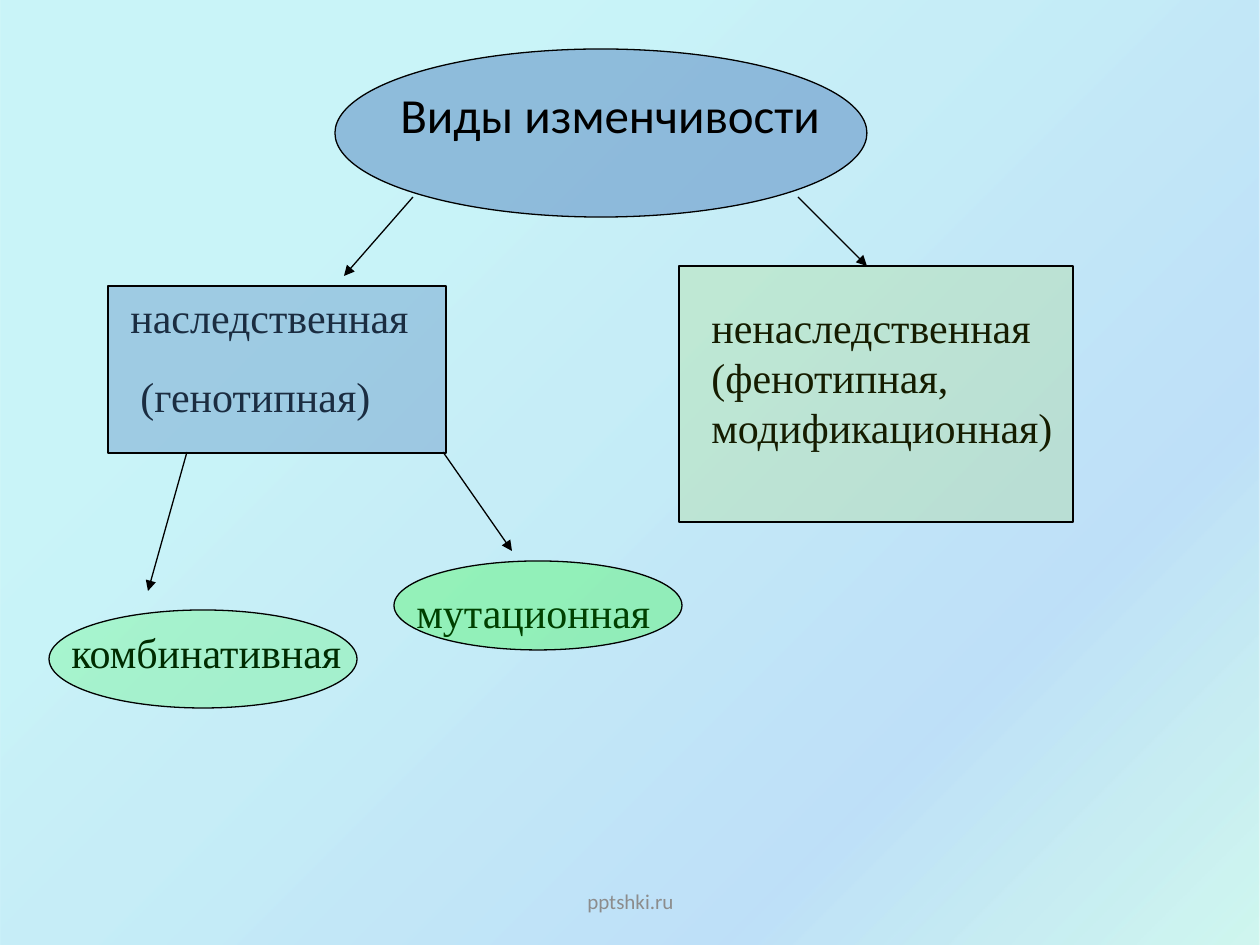
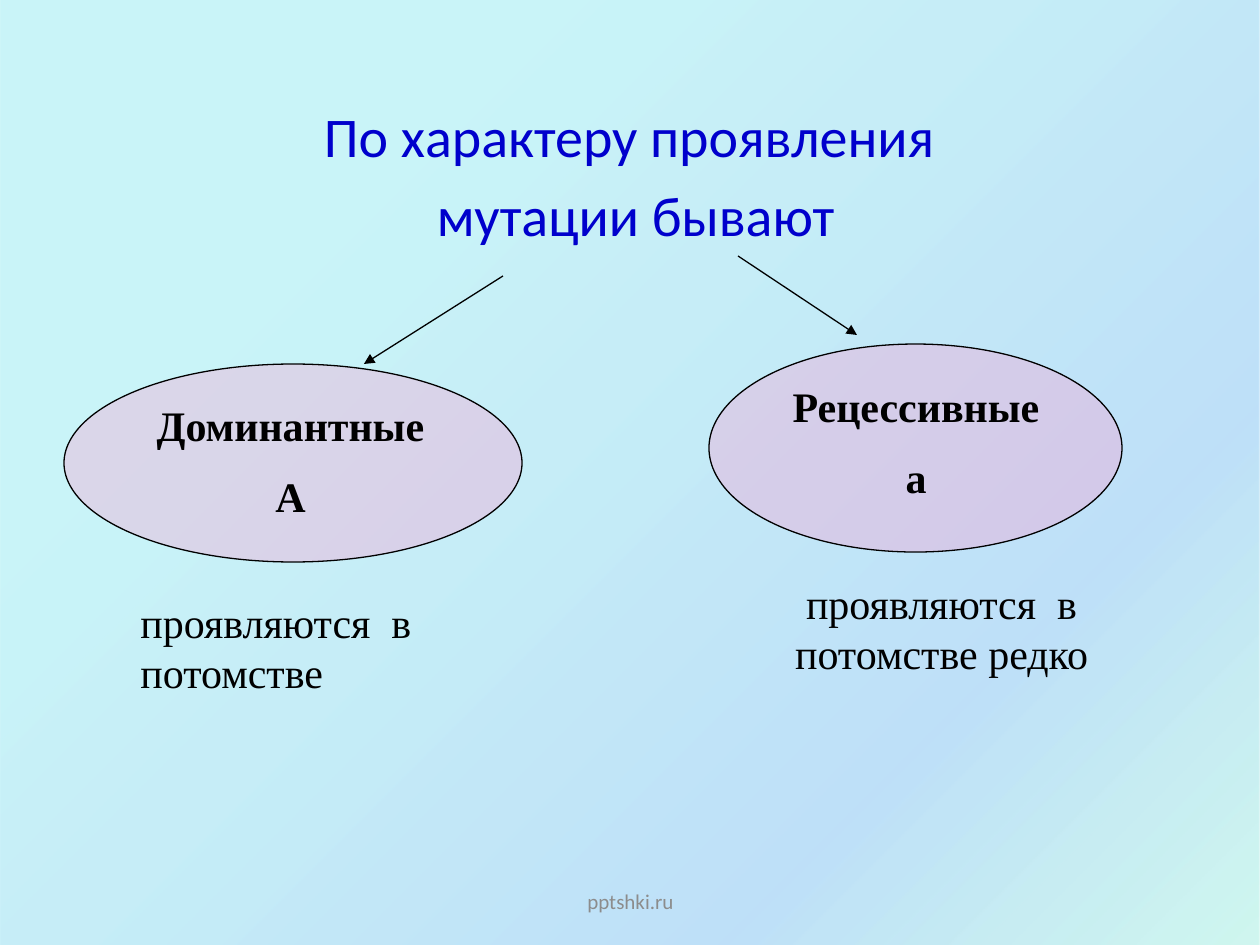
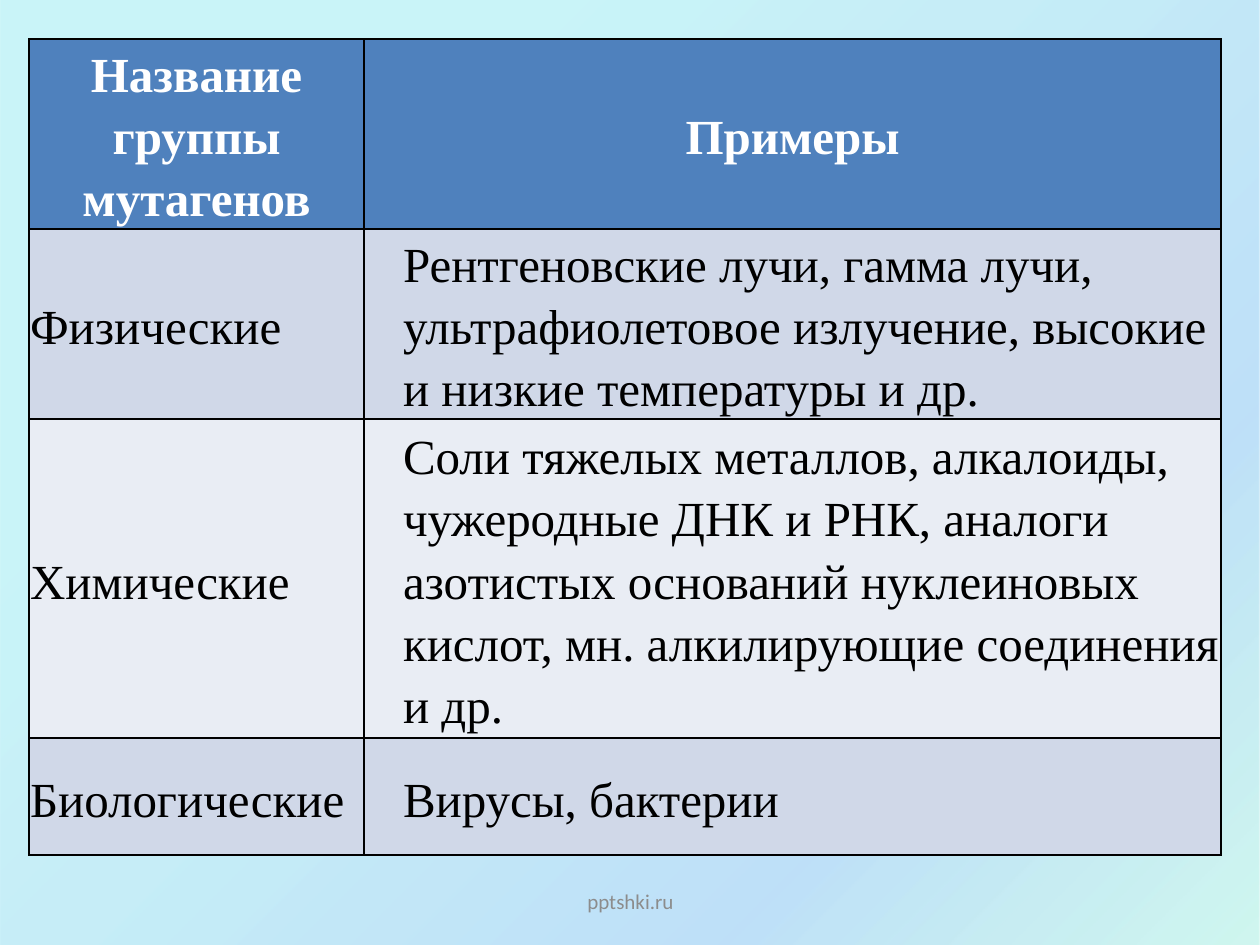
"""Build three slides on kinds of variation, mutations and mutagens."""
import pptx
import pptx.util
import pptx.dml.color
import pptx.enum.shapes
import pptx.enum.text
import pptx.oxml
import pptx.oxml.ns

SCALE = 914400 / 126
COLORS = {
    "black": "000000", "white": "FFFFFF", "gray": "8C8C8C", "navy": "0000CC",
    "blue": "4F81BD", "olive": "99CC00", "green": "00FF00", "pink": "FF99CC",
    "band": "D0D8E8", "pale": "E9EDF4",
    "aqua": "21D6E0", "sky": "0087E6", "mint": "03D4A8", "deep": "005CBF",
}
STOPS = [(25, "aqua", 23), (75, "sky", 25), (100, "mint", 18), (100, "deep", 26)]
SERIF, SANS = "Times New Roman", "Calibri"
LEFT = pptx.enum.text.PP_ALIGN.LEFT
CENTER = pptx.enum.text.PP_ALIGN.CENTER
TOP = pptx.enum.text.MSO_ANCHOR.TOP
MIDDLE = pptx.enum.text.MSO_ANCHOR.MIDDLE
OVAL = pptx.enum.shapes.MSO_SHAPE.OVAL
RECT = pptx.enum.shapes.MSO_SHAPE.RECTANGLE
STRAIGHT = pptx.enum.shapes.MSO_CONNECTOR.STRAIGHT


def px(*sizes):
    return [pptx.util.Emu(round(size * SCALE)) for size in sizes]


def color(name):
    return pptx.dml.color.RGBColor.from_string(COLORS[name])


def node(tag, inner="", **attrs):
    pairs = "".join(f' {key}="{value}"' for key, value in attrs.items())
    space = pptx.oxml.ns.nsdecls("a")
    return pptx.oxml.parse_xml(f"<a:{tag} {space}{pairs}>{inner}</a:{tag}>")


def tone(name, alpha=100):
    return (f'<a:srgbClr val="{COLORS[name]}">'
            f'<a:alpha val="{alpha * 1000}"/></a:srgbClr>')


class Deck:
    """Hold the deck's style and the current slide."""

    def __init__(self):
        self.show = pptx.Presentation()
        self.show.slide_width, self.show.slide_height = px(1260, 945)
        self.slide = None

    def paint(self):
        shape = self.slide.shapes.add_shape(RECT, *px(0, 0, 1260, 966))
        shape.shadow.inherit = False
        shape.line.fill.background()
        shape.fill.gradient()
        shape.fill.gradient_angle = 315
        item = shape._element
        stops = item.spPr.find(".//" + pptx.oxml.ns.qn("a:gsLst"))
        for stop in list(stops):
            stops.remove(stop)
        for place, name, alpha in STOPS:
            stops.append(node("gs", tone(name, alpha), pos=place * 1000))
        item.nvSpPr.cNvPr.set("id", "99")
        self.show.slide_master.shapes._spTree.insert(2, item)

    def page(self, layout):
        first = self.slide is None
        self.slide = self.show.slides.add_slide(self.show.slide_layouts[layout])
        if first:
            self.paint()
        self.text("pptshki.ru", 431, 876, 399, 50, size=12, font=SANS,
                  tint="gray", align=CENTER, anchor=MIDDLE)

    def style(self, frame, size=24, font=SERIF, tint="black", bold=False,
              align=LEFT, gap=0):
        for index, line in enumerate(frame.paragraphs):
            line.alignment = align
            line.space_before = pptx.util.Pt(gap if index else 0)
            for run in line.runs:
                run.font.size = pptx.util.Pt(size)
                run.font.name = font
                run.font.bold = bold
                run.font.color.rgb = color(tint)

    def text(self, words, x, y, w, h, wrap=True, anchor=TOP, **look):
        frame = self.slide.shapes.add_textbox(*px(x, y, w, h)).text_frame
        frame.text = words
        frame.word_wrap = wrap
        frame.vertical_anchor = anchor
        self.style(frame, **look)

    def title(self, words, x, y, w, h, **look):
        title = self.slide.shapes.title
        title.left, title.top, title.width, title.height = px(x, y, w, h)
        frame = title.text_frame
        frame.text = words
        frame.auto_size = pptx.enum.text.MSO_AUTO_SIZE.NONE
        frame.vertical_anchor = TOP
        self.style(frame, font=SANS, align=CENTER, **look)
        self.slide.shapes._spTree.append(title._element)

    def shape(self, kind, x, y, w, h, tint, alpha):
        shape = self.slide.shapes.add_shape(kind, *px(x, y, w, h))
        shape.shadow.inherit = False
        shape.fill.solid()
        shape.fill.fore_color.rgb = color(tint)
        hue = shape._element.spPr.find(".//" + pptx.oxml.ns.qn("a:srgbClr"))
        hue.append(node("alpha", val=alpha * 1000))
        shape.line.color.rgb = color("black")
        shape.line.width = pptx.util.Pt(0.75)

    def arrow(self, *ends):
        arrow = self.slide.shapes.add_connector(STRAIGHT, *px(*ends))
        arrow.line.color.rgb = color("black")
        arrow.line.width = pptx.util.Pt(0.75)
        arrow.line._get_or_add_ln().append(node("tailEnd", type="triangle"))
        arrow._element.spPr.append(node("effectLst"))

    def table(self, x, y, widths, heights, rows):
        table = self.slide.shapes.add_table(
            len(rows), len(widths), *px(x, y, sum(widths), sum(heights))).table
        for part, size in zip(table.columns, px(*widths)):
            part.width = size
        for part, size in zip(table.rows, px(*heights)):
            part.height = size
        for r, row in enumerate(rows):
            for c, words in enumerate(row):
                self.cell(table.cell(r, c), words, r, c)

    def cell(self, cell, words, r, c):
        head = r == 0
        cell.text = words
        cell.vertical_anchor = MIDDLE
        cell.margin_left, cell.margin_right = px(1, 1)
        cell.margin_top, cell.margin_bottom = px(1, 1)
        line = cell.text_frame.paragraphs[0]
        line.line_spacing = pptx.util.Pt(35.6)
        if c and not head:
            line._p.get_or_add_pPr().set("marL", str(px(38)[0]))
        self.style(cell.text_frame, size=28, bold=head,
                   tint="white" if head else "black",
                   align=CENTER if head else LEFT)
        props = cell._tc.get_or_add_tcPr()
        fill = f'<a:solidFill>{tone("black")}</a:solidFill>'
        for side in ("lnL", "lnR", "lnT", "lnB"):
            props.append(node(side, fill, w=12700))
        cell.fill.solid()
        cell.fill.fore_color.rgb = color(
            "blue" if head else "band" if r % 2 else "pale")


def kinds(deck):
    deck.page(5)
    for ends in [(413, 197, 344, 276), (798, 197, 867, 266),
                 (187, 452, 148, 591), (443, 452, 512, 551)]:
        deck.arrow(*ends)
    deck.text("наследственная", 118, 285, 305, 63, wrap=False)
    deck.text("ненаследственная\n(фенотипная, модификационная)",
              699, 295, 384, 165)
    deck.text("(генотипная)", 128, 364, 315, 63)
    deck.text("комбинативная", 59, 620, 300, 63, wrap=False)
    deck.text("мутационная", 404, 580, 260, 63, wrap=False)
    deck.shape(OVAL, 335, 49, 532, 168, "blue", 48)
    deck.shape(RECT, 679, 266, 394, 256, "olive", 14)
    deck.shape(RECT, 108, 286, 338, 167, "blue", 35)
    deck.shape(OVAL, 49, 610, 308, 98, "green", 17)
    deck.shape(OVAL, 394, 561, 288, 89, "green", 25)
    deck.title("Виды изменчивости", 384, 78, 452, 131, size=28)


def traits(deck):
    deck.page(5)
    deck.title("По характеру проявления\n мутации бывают",
               94, 95, 1071, 745, size=32, tint="navy", gap=7)
    deck.arrow(503, 276, 364, 364)
    deck.arrow(738, 256, 857, 335)
    deck.text("проявляются  в потомстве", 128, 590, 328, 113)
    deck.text("проявляются  в потомстве редко", 748, 571, 387, 190,
              align=CENTER)
    deck.shape(OVAL, 64, 364, 458, 198, "pink", 32)
    deck.shape(OVAL, 709, 344, 413, 208, "pink", 32)
    bold = dict(bold=True, align=CENTER, gap=12)
    deck.text("Доминантные\nА", 128, 393, 325, 140, **bold)
    deck.text("Рецессивные\nа", 749, 374, 334, 140, **bold)


def agents(deck):
    deck.page(6)
    deck.table(29, 39, [335, 857], [190, 190, 319, 117], [
        ("Название группы мутагенов", "Примеры"),
        ("Физические", "Рентгеновские лучи, гамма лучи, ультрафиолетовое "
         "излучение, высокие и низкие температуры и др."),
        ("Химические", "Соли тяжелых металлов, алкалоиды, чужеродные ДНК "
         "и РНК, аналоги азотистых оснований нуклеиновых кислот, мн. "
         "алкилирующие соединения и др."),
        ("Биологические", "Вирусы, бактерии"),
    ])


def main():
    deck = Deck()
    for build in (kinds, traits, agents):
        build(deck)
    deck.show.save("out.pptx")


if __name__ == "__main__":
    main()
